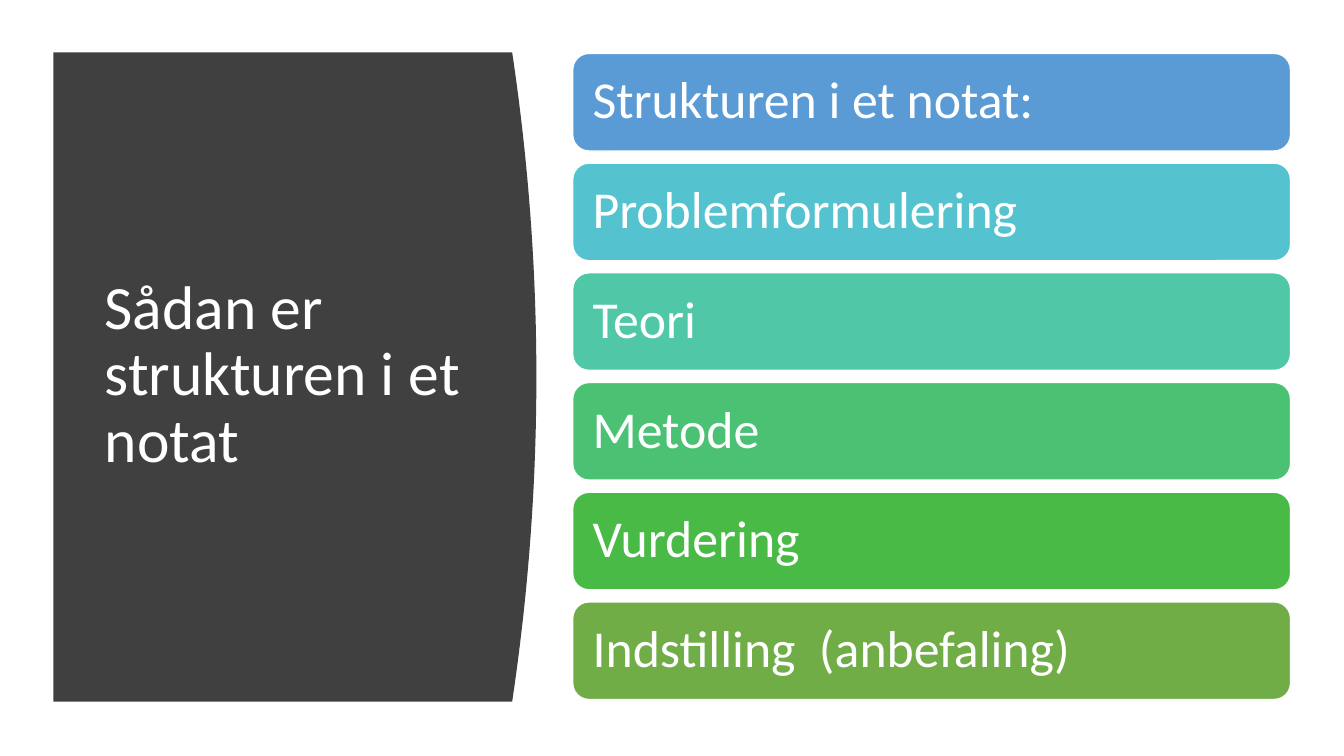
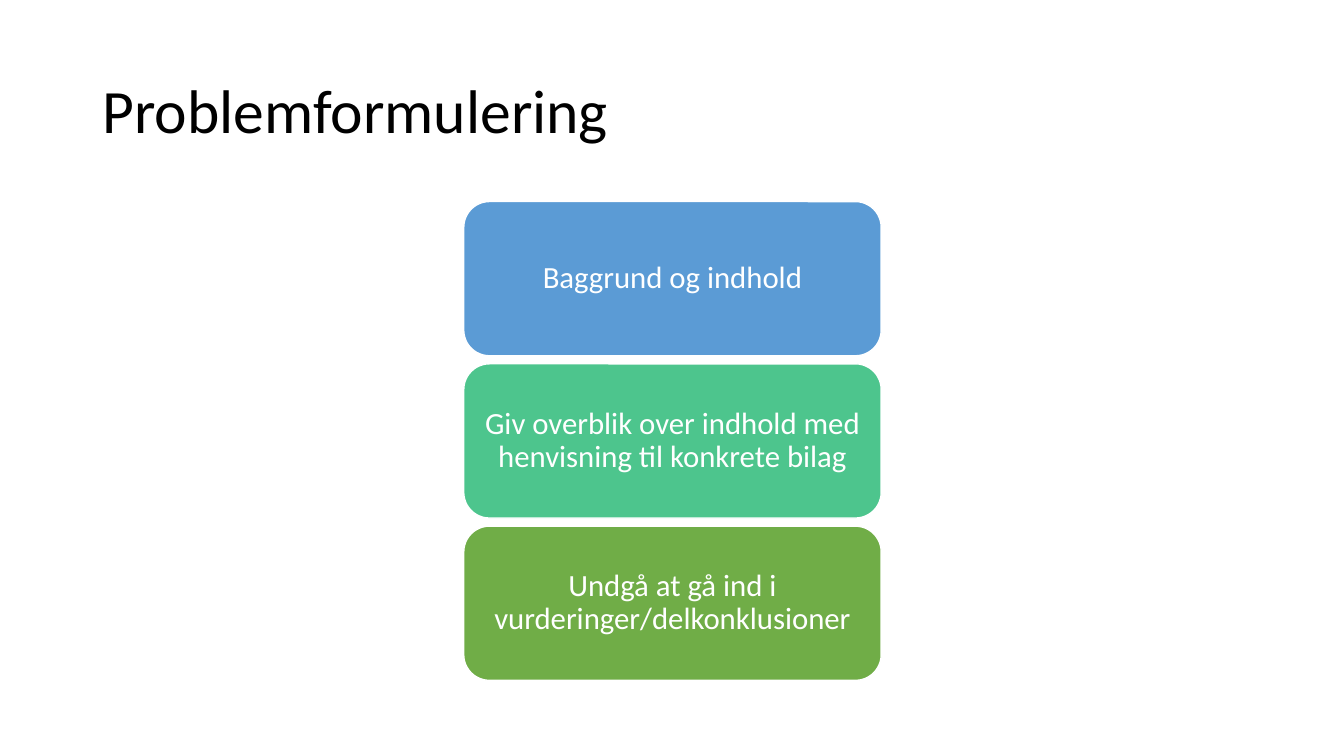
from pptx import Presentation
from pptx.dml.color import RGBColor
from pptx.enum.shapes import MSO_SHAPE
from pptx.enum.text import MSO_ANCHOR, PP_ALIGN
from pptx.util import Inches, Pt

ROUNDED = MSO_SHAPE.ROUNDED_RECTANGLE
MIDDLE = MSO_ANCHOR.MIDDLE
LEFT, CENTER = PP_ALIGN.LEFT, PP_ALIGN.CENTER

FONT = "Calibri"
TITLE_SIZE = 44
WHITE = RGBColor(0xFF, 0xFF, 0xFF)
BLACK = RGBColor(0x00, 0x00, 0x00)
CHARCOAL = RGBColor(0x40, 0x40, 0x40)
BLUE = RGBColor(0x5B, 0x9B, 0xD5)
TURQUOISE = RGBColor(0x55, 0xC3, 0xCF)
TEAL = RGBColor(0x50, 0xC8, 0xA7)
MINT = RGBColor(0x4D, 0xC5, 0x8D)
EMERALD = RGBColor(0x4B, 0xC1, 0x74)
GREEN = RGBColor(0x4A, 0xBA, 0x46)
OLIVE = RGBColor(0x70, 0xAD, 0x47)

STRUCTURE = [
    ("Strukturen i et notat:", BLUE),
    ("Problemformulering", TURQUOISE),
    ("Teori", TEAL),
    ("Metode", EMERALD),
    ("Vurdering", GREEN),
    ("Indstilling  (anbefaling)", OLIVE),
]
ADVICE = [
    ("Baggrund og indhold", BLUE),
    ("Giv overblik over indhold med henvisning til konkrete bilag", MINT),
    ("Undgå at gå ind i vurderinger/delkonklusioner", OLIVE),
]


def write_text(shape, text, size, color=WHITE, align=LEFT, inset=(0.1, 0.05)):
    """Write one vertically centred paragraph into a shape."""
    frame = shape.text_frame
    frame.word_wrap = True
    frame.vertical_anchor = MIDDLE
    frame.margin_left = frame.margin_right = Inches(inset[0])
    frame.margin_top = frame.margin_bottom = Inches(inset[1])
    paragraph = frame.paragraphs[0]
    paragraph.alignment = align
    paragraph.line_spacing = 0.9
    run = paragraph.add_run()
    run.text = text
    run.font.name = FONT
    run.font.size = Pt(size)
    run.font.color.rgb = color


def add_title(slide, text, box, color):
    """Place a slide title in the given box."""
    title = slide.shapes.add_textbox(*map(Inches, box))
    write_text(title, text, TITLE_SIZE, color)


def add_curved_panel(slide, box, bulge, steps=40):
    """Draw a dark panel whose right side bows outwards."""
    left, top, width, height = box
    side = left + width - bulge
    curve = []
    for step in range(steps + 1):
        t = step / steps
        curve.append((Inches(side + 4 * bulge * t * (1 - t)), Inches(top + height * t)))
    outline = slide.shapes.build_freeform(Inches(left), Inches(top))
    outline.add_line_segments(curve + [(Inches(left), Inches(top + height))], close=True)
    panel = outline.convert_to_shape()
    panel.shadow.inherit = False
    panel.fill.solid()
    panel.fill.fore_color.rgb = CHARCOAL
    panel.line.fill.background()


def add_card_stack(slide, box, cards, gap, **text_format):
    """Stack equally high rounded cards in the given box."""
    left, top, width, height = box
    card_height = (height - gap * (len(cards) - 1)) / len(cards)
    for index, (text, color) in enumerate(cards):
        card_top = top + index * (card_height + gap)
        card = slide.shapes.add_shape(
            ROUNDED, Inches(left), Inches(card_top), Inches(width), Inches(card_height))
        card.shadow.inherit = False
        card.fill.solid()
        card.fill.fore_color.rgb = color
        card.line.color.rgb = WHITE
        card.line.width = Pt(1)
        write_text(card, text, **text_format)


def build_structure_slide(slide):
    """Build the overview of the parts of a memo."""
    add_curved_panel(slide, (0.53, 0.52, 4.79, 6.44), bulge=0.24)
    add_title(slide, "Sådan er strukturen i et notat", (0.94, 1.11, 3.74, 5.24), WHITE)
    add_card_stack(slide, (5.68, 0.53, 7.12, 6.41), STRUCTURE, gap=0.12,
                   size=37, inset=(0.15, 0.15))


def build_problem_slide(slide):
    """Build the advice on the problem statement."""
    add_title(slide, "Problemformulering", (0.92, 0.4, 11.5, 1.45), BLACK)
    add_card_stack(slide, (4.6, 2, 4.14, 4.75), ADVICE, gap=0.08,
                   size=22, align=CENTER, inset=(0.09, 0.05))


def main():
    """Create and save the presentation."""
    deck = Presentation()
    deck.slide_width, deck.slide_height = Inches(13.33), Inches(7.5)
    blank = deck.slide_layouts[6]
    for build in (build_structure_slide, build_problem_slide):
        build(deck.slides.add_slide(blank))
    deck.save("out.pptx")


if __name__ == "__main__":
    main()
